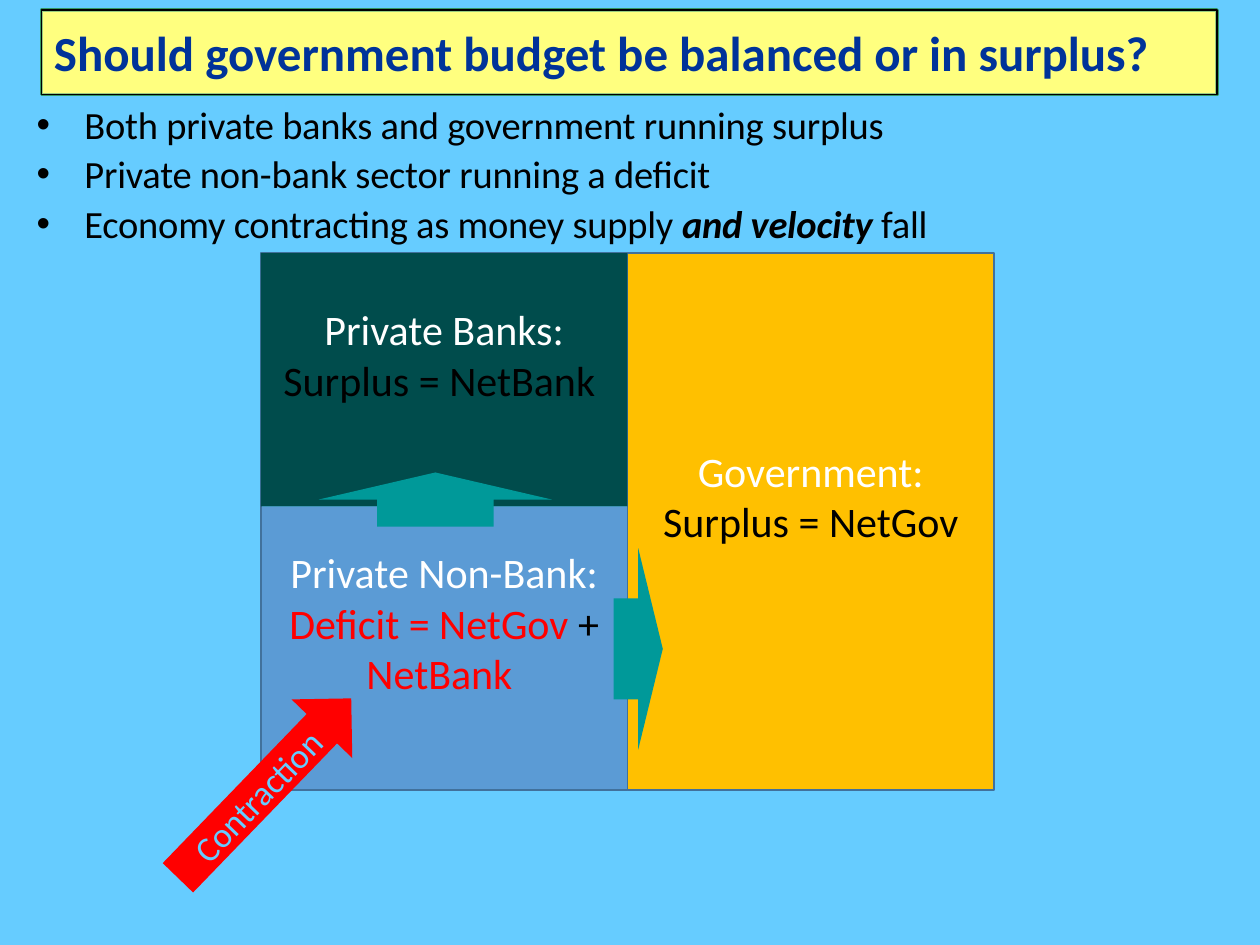
from lxml import etree
from pptx import Presentation
from pptx.dml.color import RGBColor
from pptx.enum.shapes import MSO_SHAPE
from pptx.enum.text import MSO_ANCHOR, PP_ALIGN
from pptx.oxml.ns import qn
from pptx.util import Inches, Pt

RECT, RIGHT, UP = MSO_SHAPE.RECTANGLE, MSO_SHAPE.RIGHT_ARROW, MSO_SHAPE.UP_ARROW
MIDDLE, TOP = MSO_ANCHOR.MIDDLE, MSO_ANCHOR.TOP
LEFT, CENTER = PP_ALIGN.LEFT, PP_ALIGN.CENTER

SKY = RGBColor(0x66, 0xCC, 0xFF)
YELLOW = RGBColor(0xFF, 0xFF, 0x66)
PALE_YELLOW = RGBColor(0xFF, 0xFF, 0x99)
GREEN = RGBColor(0x33, 0x99, 0x66)
NAVY = RGBColor(0x00, 0x33, 0x99)
BLUE = RGBColor(0x5B, 0x9B, 0xD5)
FRAME = RGBColor(0x41, 0x71, 0x9C)
GOLD = RGBColor(0xFF, 0xC0, 0x00)
TEAL = RGBColor(0x00, 0x99, 0x99)
DARK_TEAL = RGBColor(0x00, 0x4C, 0x4C)
RED = RGBColor(0xFF, 0x00, 0x00)
BLACK = RGBColor(0x00, 0x00, 0x00)
WHITE = RGBColor(0xFF, 0xFF, 0xFF)

# Sector diagram: two equal columns, the left one split in two
COL_X, COL_W = (2.07, 4.98), 2.91
TOP_Y, FULL_H, BANK_H = 2.01, 4.26, 2.01
LIFT = 0.46  # bottom inset that raises the sector labels


def add_shape(slide, kind, box, fill=None, line=None, width=1):
    sp = slide.shapes.add_shape(kind, *map(Inches, box))
    sp.shadow.inherit = False
    if fill is None:
        sp.fill.background()
    else:
        sp.fill.solid()
        sp.fill.fore_color.rgb = fill
    if line is None:
        sp.line.fill.background()
    else:
        sp.line.color.rgb = line
        sp.line.width = Pt(width)
    return sp


def set_frame(sp, anchor, side=0.1, bottom=0.05):
    tf = sp.text_frame
    formats = {
        "word_wrap": True, "vertical_anchor": anchor,
        "margin_left": Inches(side), "margin_right": Inches(side),
        "margin_top": Inches(0.05), "margin_bottom": Inches(bottom),
    }
    for name, value in formats.items():
        setattr(tf, name, value)
    return tf


def write(tf, paragraphs, size, align=CENTER):
    """Each paragraph is a list of (text, colour, extra font formats)."""
    for i, runs in enumerate(paragraphs):
        p = tf.paragraphs[0] if i == 0 else tf.add_paragraph()
        p.alignment = align
        for text, color, *extra in runs:
            r = p.add_run()
            r.text = text
            r.font.color.rgb = color
            formats = {"name": "Calibri", "size": Pt(size)}
            for more in extra:
                formats.update(more)
            for name, value in formats.items():
                setattr(r.font, name, value)


def add_title(slide, text):
    box = (0.33, 0.08, 9.33, 0.67)
    add_shape(slide, RECT, box, YELLOW, GREEN, 2)
    sp = add_shape(slide, RECT, box, PALE_YELLOW, BLACK, 1)
    color = sp.fill._xPr.find(qn("a:solidFill"))[0]
    etree.SubElement(color, qn("a:alpha")).set("val", "50000")
    write(set_frame(sp, MIDDLE), [[(text, NAVY, {"bold": True})]], 28, LEFT)


def add_bullets(slide, paragraphs):
    sp = slide.shapes.add_textbox(*map(Inches, (0.25, 0.75, 9.58, 1.25)))
    tf = set_frame(sp, TOP, side=0.04)
    write(tf, paragraphs, 22, LEFT)
    for p in tf.paragraphs:
        p.space_before = Pt(2)
        pPr = p._p.get_or_add_pPr()
        pPr.set("marL", str(Inches(0.38)))
        pPr.set("indent", str(-Inches(0.38)))
        etree.SubElement(pPr, qn("a:buFont")).set("typeface", "Arial")
        etree.SubElement(pPr, qn("a:buChar")).set("char", "•")
        for r in p.runs:
            r._r.get_or_add_rPr().set("spc", "-10")


def add_sector(slide, box, fill, paragraphs):
    sp = add_shape(slide, RECT, box, fill)
    write(set_frame(sp, MIDDLE, bottom=LIFT), paragraphs, 24)


def add_column_frame(slide, x):
    add_shape(slide, RECT, (x, TOP_Y, COL_W, FULL_H), None, FRAME, 0.88)


def main():
    prs = Presentation()
    prs.slide_width, prs.slide_height = Inches(10), Inches(7.5)
    slide = prs.slides.add_slide(prs.slide_layouts[6])
    slide.background.fill.solid()
    slide.background.fill.fore_color.rgb = SKY

    # Heading and points
    add_title(slide, "Should government budget be balanced or in surplus?")
    add_bullets(slide, [
        [("Both private banks and government running surplus", BLACK)],
        [("Private non-bank sector running a deficit", BLACK)],
        [("Economy contracting as money supply ", BLACK),
         ("and velocity", BLACK, {"bold": True, "italic": True}),
         (" fall", BLACK)],
    ])

    # Sectors and the flows between them
    left, right = COL_X
    add_sector(slide, (left, TOP_Y + BANK_H, COL_W, FULL_H - BANK_H), BLUE, [
        [("Private Non-Bank:", WHITE)],
        [("Deficit = NetGov", RED), (" + ", BLACK), ("NetBank ", RED)],
    ])
    add_column_frame(slide, left)
    add_sector(slide, (right, TOP_Y, COL_W, FULL_H), GOLD, [
        [("Government: ", WHITE), ("Surplus = NetGov", BLACK)],
    ])
    add_column_frame(slide, right)
    add_shape(slide, RIGHT, (4.87, 4.35, 0.39, 1.6), TEAL)
    add_sector(slide, (left, TOP_Y, COL_W, BANK_H), DARK_TEAL, [
        [("Private Banks:", WHITE)],
        [("Surplus = NetBank ", BLACK)],
    ])
    add_shape(slide, UP, (2.53, 3.75, 1.85, 0.43), TEAL)

    # Contraction arrow
    sp = add_shape(slide, RIGHT, (1.11, 5.92, 1.98, 0.67), RED)
    sp.rotation = 314
    write(set_frame(sp, MIDDLE), [[("Contraction", SKY)]], 20)

    prs.save("out.pptx")


if __name__ == "__main__":
    main()
